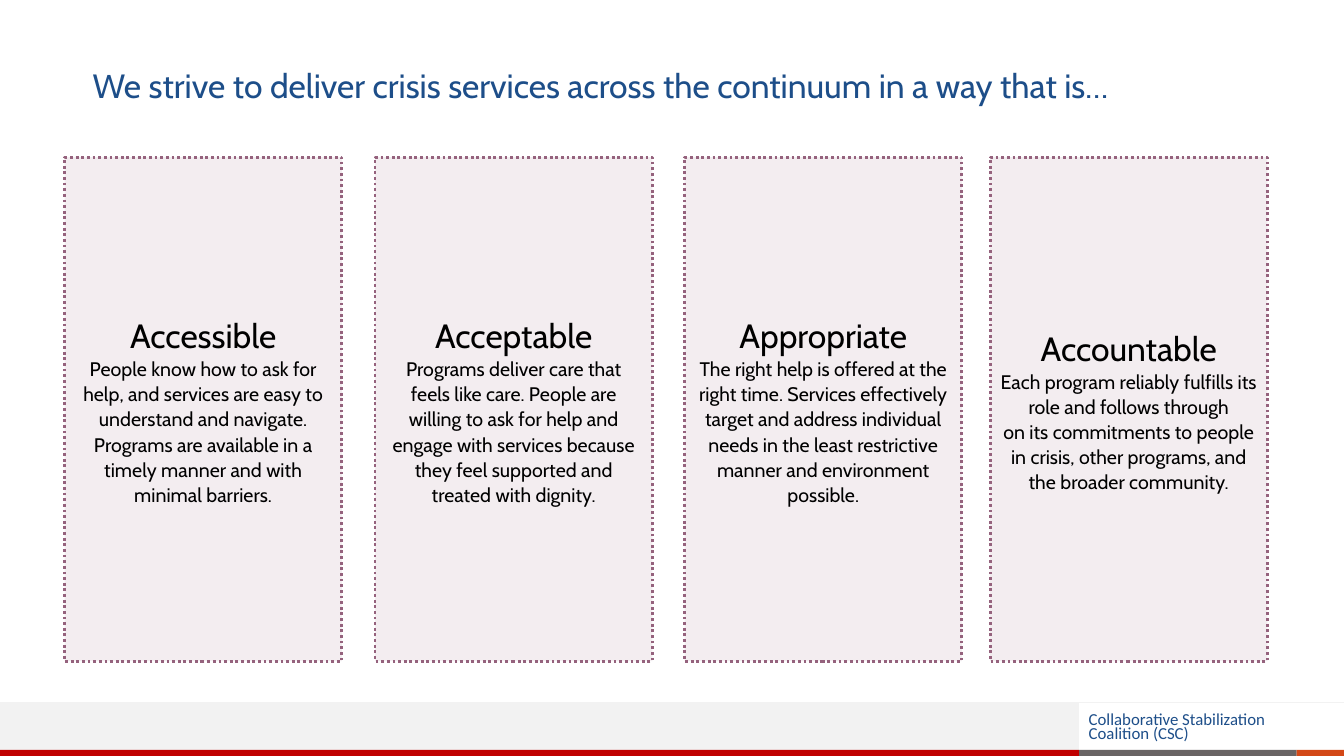
import pptx
import pptx.util
import pptx.dml.color
import pptx.enum.dml
import pptx.enum.shapes
import pptx.enum.text
import pptx.oxml.ns
from lxml import etree

Inches, Pt = pptx.util.Inches, pptx.util.Pt
RGB = pptx.dml.color.RGBColor.from_string
ALIGN = pptx.enum.text.PP_ALIGN
ANCHOR = pptx.enum.text.MSO_ANCHOR
qn = pptx.oxml.ns.qn

TITLE = "We strive to deliver crisis services across the continuum in a way that is…"
FOOTER = "Collaborative Stabilization Coalition (CSC)"
CARDS = [  # left edge, heading, body
    (0.64, "Accessible",
     "People know how to ask for help, and services are easy to understand and navigate. "
     "Programs are available in a timely manner and with minimal barriers."),
    (3.72, "Acceptable",
     "Programs deliver care that feels like care. People are willing to ask for help and "
     "engage with services because they feel supported and treated with dignity."),
    (6.79, "Appropriate",
     "The right help is offered at the right time. Services effectively target and address "
     "individual needs in the least restrictive manner and environment possible."),
    (9.82, "Accountable",
     "Each program reliably fulfills its role and follows through\von its commitments to "
     "people in crisis, other programs, and the broader community."),
]
THEME = {
    "font": "Cabin", "footer_font": "Calibri",
    "blue": "1D4E89", "black": "000000", "card": "F3EDF0", "border": "95627D",
    "band": "F2F2F2", "red": "C00000", "gray": "696464", "orange": "D34817",
    "heading_size": 24, "body_size": 14, "footer_size": 12,
}
SLIDE_W, SLIDE_H = 13.33, 7.5
CARD_TOP, CARD_W, CARD_H = 1.56, 2.75, 5
BAND_TOP, STRIP_TOP = 6.97, 7.44
SPLIT, ORANGE_LEFT = 10.7, 12.86
STRIP_H = SLIDE_H - STRIP_TOP
FOOTER_BARS = [  # left, top, width, height, colour
    (SPLIT, STRIP_TOP, ORANGE_LEFT - SPLIT, STRIP_H, "gray"),
    (0, BAND_TOP, SPLIT, STRIP_TOP - BAND_TOP, "band"),
    (0, STRIP_TOP, SPLIT, STRIP_H, "red"),
    (ORANGE_LEFT, STRIP_TOP, SLIDE_W - ORANGE_LEFT, STRIP_H, "orange"),
]


def add_rect(s, left, top, width, height, fill):
    sp = s.shapes.add_shape(pptx.enum.shapes.MSO_SHAPE.RECTANGLE,
                            *map(Inches, (left, top, width, height)))
    sp.shadow.inherit = False
    sp.fill.solid()
    sp.fill.fore_color.rgb = RGB(THEME[fill])
    sp.line.fill.background()
    return sp


def add_text_box(s, left, top, width, height):
    tf = s.shapes.add_textbox(*map(Inches, (left, top, width, height))).text_frame
    tf.word_wrap = True
    return tf


def write(p, text, size, color, font="font", **layout):
    """Fill a paragraph; line breaks take the size of the text around them."""
    p.text = text
    for name, value in layout.items():
        setattr(p, name, value)
    for r in p.runs:
        for name, value in {"size": Pt(THEME[size]), "name": THEME[font]}.items():
            setattr(r.font, name, value)
        r.font.color.rgb = RGB(THEME[color])
    for br in p._p.findall(qn("a:br")):
        etree.SubElement(br, qn("a:rPr"), sz=str(THEME[size] * 100))


def add_footer(s):
    for bar in FOOTER_BARS:
        add_rect(s, *bar)
    tf = add_text_box(s, SPLIT, 6.99, 2.17, 0.49)
    tf.vertical_anchor = ANCHOR.MIDDLE
    for side in ("left", "top", "right", "bottom"):
        setattr(tf, f"margin_{side}", Inches(0.1))
    write(tf.paragraphs[0], FOOTER, "footer_size", "blue", "footer_font",
          line_spacing=Pt(10))
    rule = s.shapes.add_connector(pptx.enum.shapes.MSO_CONNECTOR.STRAIGHT,
                                  *map(Inches, (SLIDE_W, BAND_TOP, 0, BAND_TOP)))
    rule.line.color.rgb = RGB(THEME["band"])
    rule.line.width = Pt(0.5)
    etree.SubElement(rule._element.spPr, qn("a:effectLst"))


def add_card(s, left, heading, body):
    sp = add_rect(s, left, CARD_TOP, CARD_W, CARD_H, "card")
    sp.line.color.rgb = RGB(THEME["border"])
    sp.line.width = Pt(2)
    sp.line.dash_style = pptx.enum.dml.MSO_LINE.ROUND_DOT
    tf = sp.text_frame
    tf.word_wrap = True
    tf.vertical_anchor = ANCHOR.MIDDLE
    layout = {"alignment": ALIGN.CENTER, "line_spacing": 1.07}
    write(tf.paragraphs[0], heading, "heading_size", "black", **layout)
    write(tf.add_paragraph(), body, "body_size", "black", **layout)


def main():
    prs = pptx.Presentation()
    prs.slide_width, prs.slide_height = Inches(SLIDE_W), Inches(SLIDE_H)
    s = prs.slides.add_slide(prs.slide_layouts[6])
    add_footer(s)
    title = add_text_box(s, 0.82, 0.59, 10.55, 0.91)
    write(title.paragraphs[0], TITLE, "heading_size", "blue")
    for card in CARDS:
        add_card(s, *card)
    prs.save("out.pptx")


if __name__ == "__main__":
    main()
